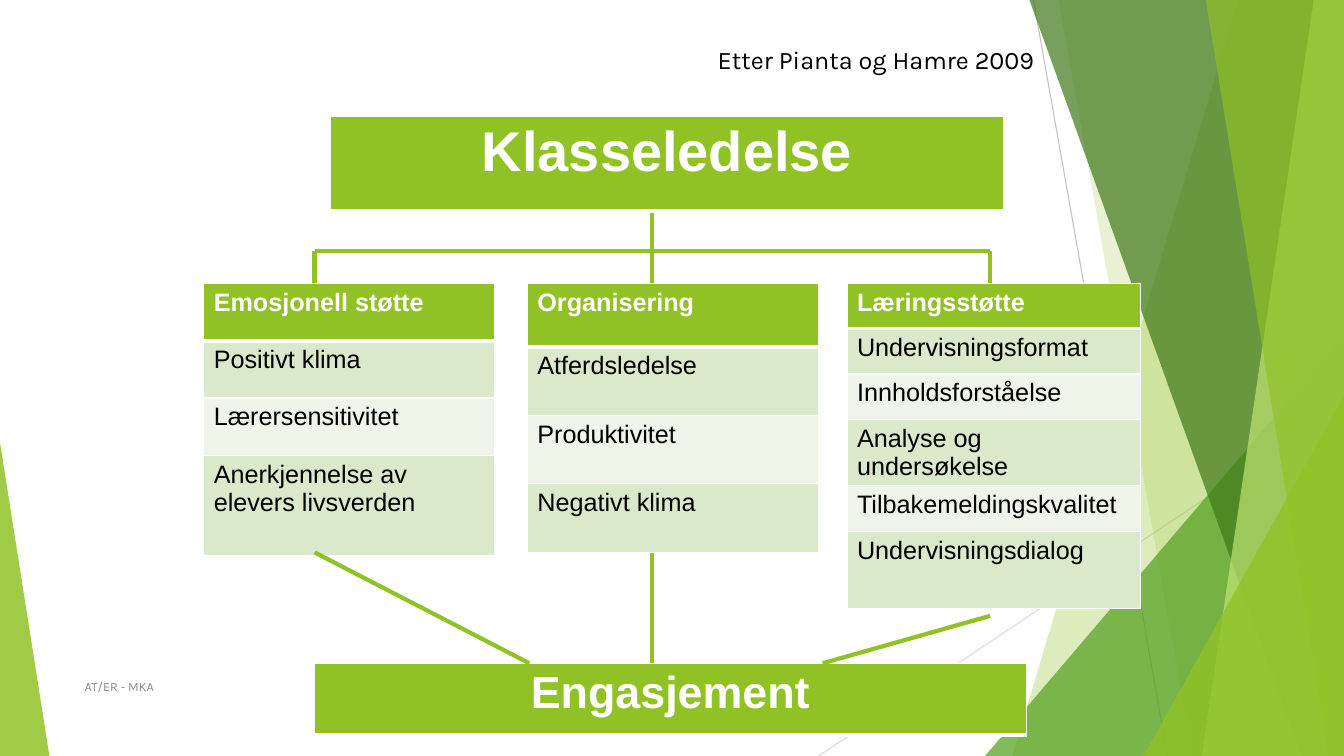
"""Build the classroom leadership diagram slide."""
from dataclasses import dataclass

import lxml.etree
import pptx
import pptx.dml.color
import pptx.enum.shapes
import pptx.enum.text
import pptx.oxml
import pptx.oxml.ns
import pptx.util

Inches = pptx.util.Inches
qn = pptx.oxml.ns.qn
SHAPE = pptx.enum.shapes.MSO_SHAPE
ALIGN = pptx.enum.text.PP_ALIGN
ANCHOR = pptx.enum.text.MSO_ANCHOR


@dataclass(frozen=True)
class Theme:
    green: str = "90C226"
    leaf: str = "54A021"
    forest: str = "3F7818"
    lime: str = "BFE471"
    band_dark: str = "DBE9CB"
    band_light: str = "EEF4E7"
    white: str = "FFFFFF"
    black: str = "000000"
    footer_gray: str = "888888"
    ray_dark: str = "BFBFBF"
    ray_light: str = "D8D8D8"
    title: float = 40
    result: float = 32
    body: float = 18
    footer: float = 9
    table_font: str = "Arial"
    note_font: str = "Karla"
    rule: float = 3
    thin: float = 1
    hairline: float = 0.75


@dataclass(frozen=True)
class Line:
    x1: float
    y1: float
    x2: float
    y2: float
    color: str
    width: float


@dataclass(frozen=True)
class Facet:
    points: tuple[tuple[float, float], ...]
    color: str
    opacity: int


@dataclass(frozen=True)
class Triangle:
    left: float
    top: float
    width: float
    apex: float
    color: str
    opacity: int


@dataclass(frozen=True)
class Grid:
    left: float
    top: float
    width: float
    heights: tuple[float, ...]
    texts: tuple[str, ...]
    size: float
    align: ALIGN = ALIGN.LEFT


@dataclass(frozen=True)
class Note:
    left: float
    top: float
    width: float
    text: str
    size: float
    color: str
    anchor: ANCHOR


THEME = Theme()
WIDTH, HEIGHT = 13.33, 7.5
LEFT_X, MIDDLE_X, RIGHT_X = 3.12, 6.47, 9.82
BRANCH_Y, COLUMN_Y, RESULT_Y = 2.49, 2.81, 6.58


def green_line(x1: float, y1: float, x2: float, y2: float) -> Line:
    """Return a thick green line of the diagram."""
    return Line(x1, y1, x2, y2, THEME.green, THEME.rule)


def band(top_x: float, bottom_x: float, color: str, opacity: int) -> Facet:
    """Return a full-height facet that ends at the right page edge."""
    return Facet(((top_x, 0), (WIDTH, 0), (WIDTH, HEIGHT), (bottom_x, HEIGHT)), color, opacity)


BACKDROP = (
    Line(10.25, 0, 11.58, HEIGHT, THEME.ray_dark, THEME.hairline),
    Line(WIDTH, 4.03, 8.12, HEIGHT, THEME.ray_light, THEME.hairline),
    band(12.28, 10.04, THEME.green, 30),
    band(10.5, 11.83, THEME.green, 20),
    Triangle(9.77, 3.33, 3.56, 1, THEME.leaf, 72),
    band(10.21, 12.91, THEME.forest, 70),
    band(13.03, 11.92, THEME.lime, 70),
    band(11.96, 13.18, THEME.green, 65),
    Triangle(11.34, 3.93, 1.99, 1, THEME.green, 80),
    Triangle(0, 4.39, 0.49, 0, THEME.green, 85),
)
DIAGRAM = (
    green_line(MIDDLE_X, 2.02, MIDDLE_X, RESULT_Y),
    Grid(2.02, COLUMN_Y, 2.89, (0.57, 0.57, 0.57, 0.99),
         ("Emosjonell støtte", "Positivt klima", "Lærersensitivitet",
          "Anerkjennelse av elevers livsverden"), THEME.body),
    Grid(5.23, COLUMN_Y, 2.89, (0.63, 0.68, 0.68, 0.68),
         ("Organisering", "Atferdsledelse", "Produktivitet", "Negativt klima"), THEME.body),
    Grid(8.4, COLUMN_Y, 2.91, (0.45, 0.45, 0.45, 0.66, 0.45, 0.77),
         ("Læringsstøtte", "Undervisningsformat", "Innholdsforståelse",
          "Analyse og undersøkelse", "Tilbakemeldingskvalitet", "Undervisningsdialog"),
         THEME.body),
    Grid(3.28, 1.15, 6.67, (0.94,), ("Klasseledelse",), THEME.title, ALIGN.CENTER),
    Grid(3.12, RESULT_Y, 7.06, (0.71,), ("Engasjement",), THEME.result, ALIGN.CENTER),
    green_line(LEFT_X, BRANCH_Y, RIGHT_X, BRANCH_Y),
    green_line(LEFT_X, BRANCH_Y, LEFT_X, COLUMN_Y),
    green_line(RIGHT_X, BRANCH_Y, RIGHT_X, COLUMN_Y),
    green_line(LEFT_X, 5.48, 5.25, RESULT_Y),
    green_line(RIGHT_X, 6.11, 8.16, RESULT_Y),
    Note(7.02, 0.39, 3.39, "Etter Pianta og Hamre 2009", THEME.body, THEME.black, ANCHOR.TOP),
    Note(0.74, 6.61, 6.89, "AT/ER - MKA", THEME.footer, THEME.footer_gray, ANCHOR.MIDDLE),
)


def rgb(color: str) -> pptx.dml.color.RGBColor:
    """Return the colour object of a hex string."""
    return pptx.dml.color.RGBColor.from_string(color)


def add_span(para, text: str, font: str, size: float, color: str, bold: bool = False) -> None:
    """Add one run of text to a paragraph."""
    span = para.add_run()
    span.text = text
    span.font.name = font
    span.font.size = pptx.util.Pt(size)
    span.font.bold = bold
    span.font.color.rgb = rgb(color)


def draw_line(page, line: Line) -> None:
    """Draw a straight line without a shadow."""
    connector = page.shapes.add_connector(
        pptx.enum.shapes.MSO_CONNECTOR.STRAIGHT,
        Inches(line.x1), Inches(line.y1), Inches(line.x2), Inches(line.y2))
    connector.line.color.rgb = rgb(line.color)
    connector.line.width = pptx.util.Pt(line.width)
    lxml.etree.SubElement(connector._element.spPr, qn("a:effectLst"))


def paint(shape, color: str, opacity: int) -> None:
    """Fill a shape with a translucent colour and no outline."""
    shape.shadow.inherit = False
    shape.fill.solid()
    shape.fill.fore_color.rgb = rgb(color)
    shape.line.fill.background()
    tint = shape._element.spPr.find(qn("a:solidFill")).find(qn("a:srgbClr"))
    lxml.etree.SubElement(tint, qn("a:alpha"), val=str(opacity * 1000))


def draw_facet(page, facet: Facet) -> None:
    """Draw a translucent polygon."""
    corners = [(Inches(x), Inches(y)) for x, y in facet.points]
    builder = page.shapes.build_freeform(*corners[0])
    builder.add_line_segments(corners[1:], close=True)
    paint(builder.convert_to_shape(), facet.color, facet.opacity)


def draw_triangle(page, triangle: Triangle) -> None:
    """Draw a translucent triangle that stands on the page bottom."""
    shape = page.shapes.add_shape(
        SHAPE.ISOSCELES_TRIANGLE, Inches(triangle.left), Inches(triangle.top),
        Inches(triangle.width), Inches(HEIGHT - triangle.top))
    shape.adjustments[0] = triangle.apex
    paint(shape, triangle.color, triangle.opacity)


def add_borders(cell, row: int) -> None:
    """Give a cell white borders, heavy below the header row."""
    heavy = {"lnB": row == 0, "lnT": row == 1}
    properties = cell._tc.get_or_add_tcPr()
    for index, side in enumerate(("lnL", "lnR", "lnT", "lnB")):
        width = THEME.rule if heavy.get(side) else THEME.thin
        border = lxml.etree.Element(qn(f"a:{side}"), w=str(pptx.util.Pt(width)))
        fill = lxml.etree.SubElement(border, qn("a:solidFill"))
        lxml.etree.SubElement(fill, qn("a:srgbClr"), val=THEME.white)
        properties.insert(index, border)


def draw_grid(page, grid: Grid) -> None:
    """Draw a one-column table with a green header and banded rows."""
    table = page.shapes.add_table(
        len(grid.texts), 1, Inches(grid.left), Inches(grid.top),
        Inches(grid.width), Inches(sum(grid.heights))).table
    table.first_row = table.horz_banding = False
    for row, (height, text) in enumerate(zip(grid.heights, grid.texts)):
        table.rows[row].height = Inches(height)
        cell = table.cell(row, 0)
        header = row == 0
        shade = THEME.band_dark if row % 2 else THEME.band_light
        cell.fill.solid()
        cell.fill.fore_color.rgb = rgb(THEME.green if header else shade)
        add_borders(cell, row)
        para = cell.text_frame.paragraphs[0]
        para.alignment = grid.align
        add_span(para, text, THEME.table_font, grid.size,
                 THEME.white if header else THEME.black, header)


def draw_note(page, note: Note) -> None:
    """Draw a plain text box."""
    box = page.shapes.add_textbox(
        Inches(note.left), Inches(note.top), Inches(note.width), Inches(0.4))
    box.text_frame.word_wrap = True
    box.text_frame.vertical_anchor = note.anchor
    add_span(box.text_frame.paragraphs[0], note.text, THEME.note_font, note.size, note.color)


def main() -> None:
    """Build and save the deck."""
    deck = pptx.Presentation()
    deck.slide_width, deck.slide_height = Inches(WIDTH), Inches(HEIGHT)
    page = deck.slides.add_slide(deck.slide_layouts[6])
    painters = {Line: draw_line, Facet: draw_facet, Triangle: draw_triangle,
                Grid: draw_grid, Note: draw_note}
    for element in BACKDROP + DIAGRAM:
        painters[type(element)](page, element)
    deck.save("out.pptx")


if __name__ == "__main__":
    main()
